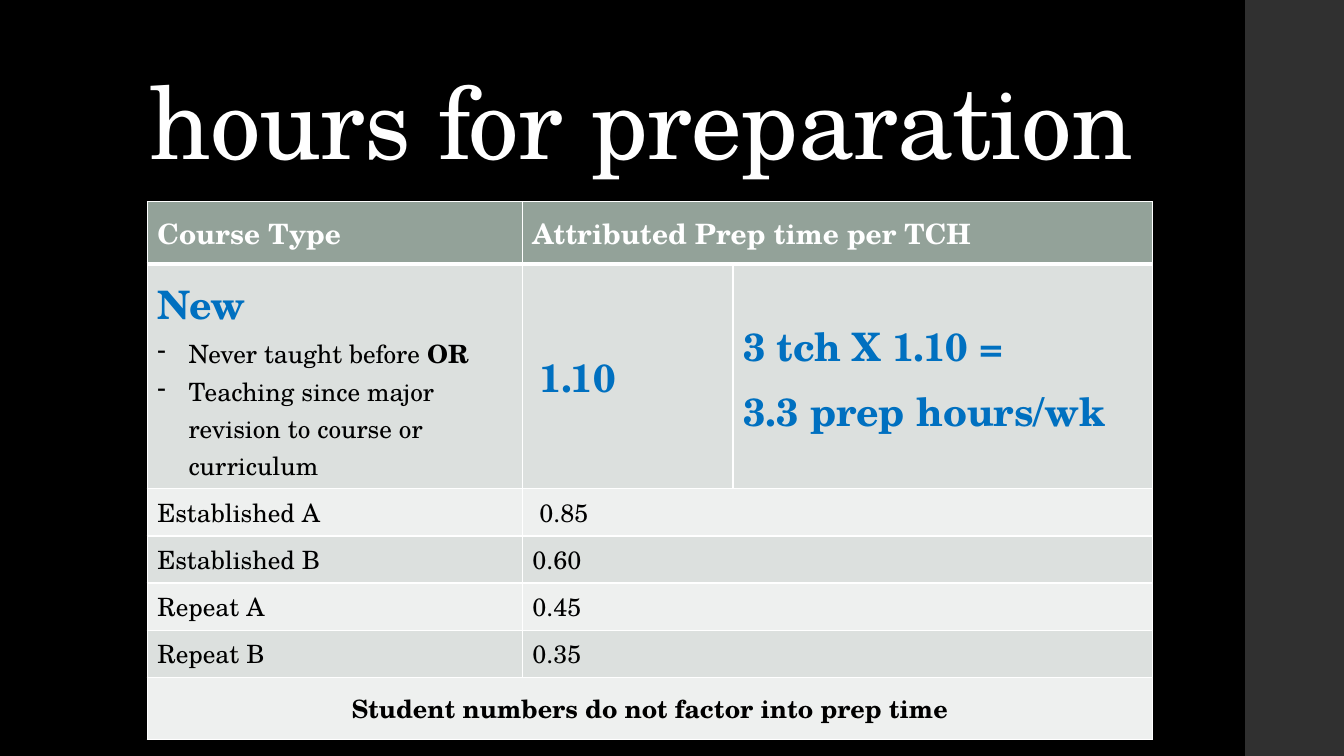
from dataclasses import dataclass

from lxml import etree
from pptx import Presentation
from pptx.dml.color import RGBColor
from pptx.enum.shapes import MSO_SHAPE
from pptx.enum.text import MSO_ANCHOR, PP_ALIGN
from pptx.oxml.ns import qn
from pptx.util import Inches, Pt

RECTANGLE = MSO_SHAPE.RECTANGLE
BOTTOM, MIDDLE = MSO_ANCHOR.BOTTOM, MSO_ANCHOR.MIDDLE
LEFT, CENTER = PP_ALIGN.LEFT, PP_ALIGN.CENTER

FONT = "TeX Gyre Schola"
COLORS = {
    "background": "000000", "side band": "303030", "header": "93A299",
    "dark row": "DCE0DE", "light row": "EEF0EF",
    "white": "FFFFFF", "black": "000000", "blue": "0070C0",
}
COLUMN_WIDTHS = [3.72, 2.09, 4.16]
ROW_HEIGHTS = [0.62, 1.77, 0.37, 0.35, 0.25, 0.26, 0.62]
THIN, THICK = 1, 3


@dataclass(frozen=True)
class Words:
    text: str
    size: float = 18
    color: str = "black"
    bold: bool = False


@dataclass(frozen=True)
class Line:
    words: tuple[Words, ...]
    dashed: bool = False
    align: int = LEFT
    spacing: float = 1.0


@dataclass(frozen=True)
class Entry:
    row: int
    column: int
    lines: tuple[Line, ...]
    span: int = 1


def rgb(color: str) -> RGBColor:
    return RGBColor.from_string(COLORS[color])


def add_words(paragraph, words: Words):
    run = paragraph.add_run()
    run.text = words.text
    run.font.name = FONT
    run.font.size = Pt(words.size)
    run.font.bold = words.bold
    run.font.color.rgb = rgb(words.color)
    return run


def add_dash(paragraph) -> None:
    properties = paragraph._p.get_or_add_pPr()
    properties.set("marL", str(Inches(0.31)))
    properties.set("indent", str(Inches(-0.31)))
    etree.SubElement(properties, qn("a:buChar"), char="-")


def set_borders(cell, top: float, bottom: float) -> None:
    properties = cell._tc.get_or_add_tcPr()
    widths = {"a:lnL": THIN, "a:lnR": THIN, "a:lnT": top, "a:lnB": bottom}
    for side, width in widths.items():
        border = etree.SubElement(properties, qn(side), w=str(Pt(width)))
        fill = etree.SubElement(border, qn("a:solidFill"))
        etree.SubElement(fill, qn("a:srgbClr"), val=COLORS["white"])


def fill_entry(table, entry: Entry) -> None:
    cell = table.cell(entry.row, entry.column)
    if entry.span > 1:
        cell.merge(table.cell(entry.row, entry.column + entry.span - 1))
    cell.vertical_anchor = MIDDLE
    frame = cell.text_frame
    for number, line in enumerate(entry.lines):
        paragraph = frame.add_paragraph() if number else frame.paragraphs[0]
        paragraph.alignment = line.align
        paragraph.line_spacing = line.spacing
        if line.dashed:
            add_dash(paragraph)
        for words in line.words:
            add_words(paragraph, words)


def header(text: str) -> tuple[Line, ...]:
    return (Line((Words(text, 20, "white", True),)),)


def plain(text: str) -> tuple[Line, ...]:
    return (Line((Words(text),)),)


def highlight(text: str) -> Line:
    return Line((Words(text, 28, "blue", True),), spacing=1.07)


new_course = (
    highlight("New"),
    Line((Words("Never taught before "), Words("OR", bold=True)), dashed=True),
    Line((Words("Teaching since major revision to course or curriculum"),), dashed=True),
)
new_rate = (Line((Words(" ", bold=True), Words("1.10", 28, "blue", True))),)
new_example = (highlight("3 tch X 1.10 ="), highlight("3.3 prep hours/wk"))
closing_note = (
    Line((Words("Student numbers do not factor into prep time", bold=True),), align=CENTER),
)
later_courses = [
    ("Established A", " 0.85"), ("Established B", "0.60"),
    ("Repeat A", "0.45"), ("Repeat B", "0.35"),
]

entries = [
    Entry(0, 0, header("Course Type")),
    Entry(0, 1, header("Attributed Prep time per TCH"), span=2),
    Entry(1, 0, new_course),
    Entry(1, 1, new_rate),
    Entry(1, 2, new_example),
    Entry(6, 0, closing_note, span=3),
]
for row, (course, rate) in enumerate(later_courses, start=2):
    entries += [Entry(row, 0, plain(course)), Entry(row, 1, plain(rate), span=2)]


def main() -> None:
    deck = Presentation()
    deck.slide_width, deck.slide_height = Inches(13.33), Inches(7.5)
    slide = deck.slides.add_slide(deck.slide_layouts[5])
    slide.background.fill.solid()
    slide.background.fill.fore_color.rgb = rgb("background")

    # Side band
    band = slide.shapes.add_shape(
        RECTANGLE, Inches(12.35), 0, Inches(0.98), deck.slide_height)
    band.shadow.inherit = False
    band.fill.solid()
    band.fill.fore_color.rgb = rgb("side band")
    band.line.fill.background()

    # Title
    title = slide.shapes.title
    title.left, title.top = Inches(1.38), Inches(0.4)
    title.width, title.height = Inches(10.6), Inches(1.45)
    title.text_frame.vertical_anchor = BOTTOM
    title.text_frame.word_wrap = True
    heading = title.text_frame.paragraphs[0]
    heading.alignment = LEFT
    heading.line_spacing = 0.9
    heading_run = add_words(heading, Words("hours for preparation", 72, "white"))
    heading_run.font._element.set("spc", "-50")

    # Preparation table
    table = slide.shapes.add_table(
        len(ROW_HEIGHTS), len(COLUMN_WIDTHS),
        Inches(1.46), Inches(2), Inches(9.97), Inches(4.61)).table
    for column, width in zip(table.columns, COLUMN_WIDTHS):
        column.width = Inches(width)
    for number, (row, height) in enumerate(zip(table.rows, ROW_HEIGHTS)):
        row.height = Inches(height)
        band_color = "dark row" if number % 2 else "light row"
        for cell in row.cells:
            set_borders(cell, top=THICK if number == 1 else THIN,
                        bottom=THICK if number == 0 else THIN)
            cell.fill.solid()
            cell.fill.fore_color.rgb = rgb(band_color if number else "header")
    for entry in entries:
        fill_entry(table, entry)

    deck.save("out.pptx")


if __name__ == "__main__":
    main()
